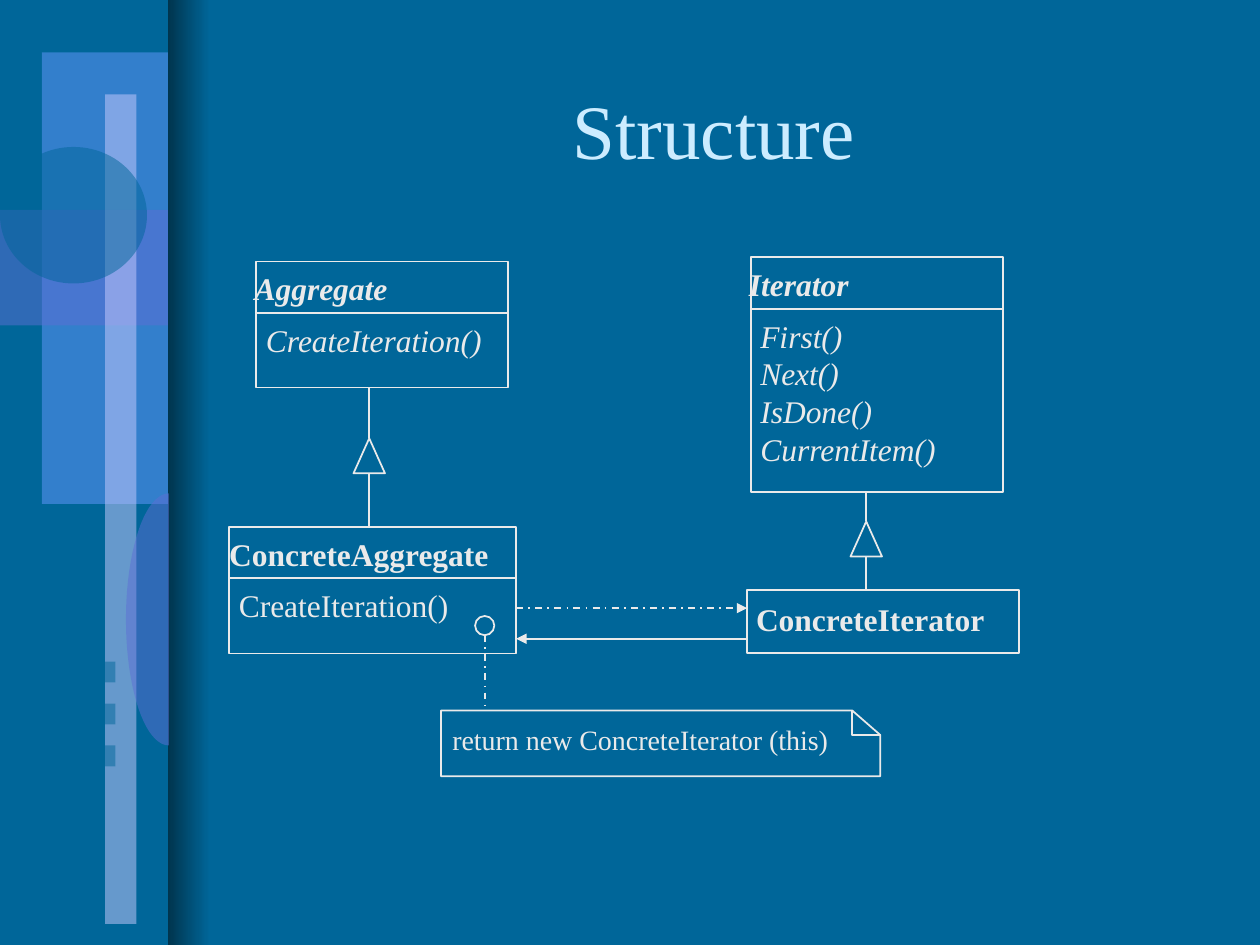
from math import cos, pi, sin

from lxml import etree
from pptx import Presentation
from pptx.dml.color import RGBColor
from pptx.enum.dml import MSO_LINE
from pptx.enum.shapes import MSO_CONNECTOR, MSO_SHAPE
from pptx.enum.text import MSO_ANCHOR, PP_ALIGN
from pptx.oxml.ns import qn
from pptx.util import Pt

RECT, OVAL, TRIANGLE = MSO_SHAPE.RECTANGLE, MSO_SHAPE.OVAL, MSO_SHAPE.ISOSCELES_TRIANGLE
FONT = "Times New Roman"
COLORS = {key: RGBColor.from_string(value) for key, value in {
    "ground": "006699", "shade": "00354E", "title": "CCECFF", "ink": "EAEAEA",
    "blue": "6699FF", "violet": "5E6FD4", "lilac": "CCCCFF"}.items()}

prs = Presentation()
prs.slide_width, prs.slide_height = Pt(720), Pt(540)
slide = prs.slides.add_slide(prs.slide_layouts[5])
slide.background.fill.solid()
slide.background.fill.fore_color.rgb = COLORS["ground"]
shapes = slide.shapes


def finish(shape, tint=None):
    """Give a shape a half-transparent tint, or else only an outline."""
    shape.shadow.inherit = False
    if tint:
        shape.fill.solid()
        shape.fill.fore_color.rgb = COLORS[tint]
        color = shape.fill._xPr.find(qn("a:solidFill"))[0]
        etree.SubElement(color, qn("a:alpha"), val="50000")
        shape.line.fill.background()
    else:
        shape.fill.background()
        shape.line.color.rgb = COLORS["ink"]
        shape.line.width = Pt(1)
    return shape


def draw_line(x1, y1, x2, y2, dashed=False, arrow=False):
    line = shapes.add_connector(MSO_CONNECTOR.STRAIGHT, Pt(x1), Pt(y1), Pt(x2), Pt(y2))
    line.line.color.rgb = COLORS["ink"]
    line.line.width = Pt(1)
    if dashed:
        line.line.dash_style = MSO_LINE.DASH_DOT
    if arrow:
        etree.SubElement(line.line._get_or_add_ln(), qn("a:tailEnd"), type="triangle")
    etree.SubElement(line._element.spPr, qn("a:effectLst"))
    return line


# Decoration on the left
band = shapes.add_shape(RECT, Pt(96), 0, Pt(24), Pt(540))
band.shadow.inherit = False
band.line.fill.background()
band.fill.gradient()
band.fill.gradient_angle = 0
for stop, tone in zip(band.fill.gradient_stops, ("shade", "ground")):
    stop.color.rgb = COLORS[tone]

decoration = [
    (RECT, 24, 30, 72, 258, "blue"),
    (RECT, 0, 120, 96, 66, "violet"),
    (RECT, 60, 54, 18, 474, "lilac"),
    (OVAL, 0, 84, 84, 78, "ground"),
] + [(RECT, 0, 378 + 24 * i, 66, 12, "ground") for i in range(3)]
for kind, x, y, width, height, tint in decoration:
    finish(shapes.add_shape(kind, Pt(x), Pt(y), Pt(width), Pt(height)), tint)

arc = [(Pt(96.5 - 24.5 * sin(pi * i / 40)), Pt(354 - 72 * cos(pi * i / 40)))
       for i in range(41)]
half_oval = shapes.build_freeform(*arc[0])
half_oval.add_line_segments(arc[1:])
finish(half_oval.convert_to_shape(), "violet")

# Title
title = shapes.title
title.left, title.top, title.width, title.height = Pt(102), Pt(47), Pt(612), Pt(90)
frame = title.text_frame
frame.margin_left = frame.margin_right = frame.margin_top = frame.margin_bottom = 0
frame.vertical_anchor = MSO_ANCHOR.TOP
frame.text = "Structure"
frame.paragraphs[0].alignment = PP_ALIGN.CENTER
font = frame.paragraphs[0].runs[0].font
font.name, font.size, font.color.rgb = FONT, Pt(44), COLORS["title"]

# Classes: x, y, width, height, name, name offset, methods, abstract
HEADER = 29.5
classes = [
    (146.5, 149.5, 144, 72, "Aggregate", (-1, 4.5), ["CreateIteration()"], True),
    (131, 301, 164, 72.5, "ConcreteAggregate", (0, 4.5), ["CreateIteration()"], False),
    (429, 147, 144, 134, "Iterator", (-1, 4.5),
     ["First()", "Next()", "IsDone()", "CurrentItem()"], True),
    (427, 337, 155.5, 36, "ConcreteIterator", (5, 6), [], False),
]
# Labels: x, y, width, lines, size, bold, italic
labels = [(258.5, 413, 235, ["return new ConcreteIterator (this)"], 16, False, False)]
for x, y, width, height, name, (dx, dy), methods, abstract in classes:
    finish(shapes.add_shape(RECT, Pt(x), Pt(y), Pt(width), Pt(height)))
    labels.append((x + dx, y + dy, width - 5, [name], 18, True, abstract))
    if methods:
        draw_line(x, y + HEADER, x + width, y + HEADER)
        labels.append((x + 5.5, y + HEADER + 4.5, width - 6, methods, 18, False, abstract))

# Note with a folded corner
for corners, closed in (
    ([(252, 406), (487, 406), (503, 420), (503, 443.5), (252, 443.5)], True),
    ([(487, 406), (487, 420), (503, 420)], False),
):
    points = [(Pt(x), Pt(y)) for x, y in corners]
    outline = shapes.build_freeform(*points[0])
    outline.add_line_segments(points[1:], close=closed)
    finish(outline.convert_to_shape())

for x, y, width, lines, size, bold, italic in labels:
    box = shapes.add_textbox(Pt(x), Pt(y), Pt(width), Pt(size * 1.2 * len(lines)))
    frame = box.text_frame
    frame.word_wrap = True
    frame.margin_left = frame.margin_right = frame.margin_top = frame.margin_bottom = 0
    frame.text = "\n".join(lines)
    for paragraph in frame.paragraphs:
        paragraph.line_spacing = Pt(size * 1.2)
        font = paragraph.runs[0].font
        font.name, font.size, font.color.rgb = FONT, Pt(size), COLORS["ink"]
        font.bold, font.italic = bold, italic

# Inheritance: centre, parent bottom, triangle tip, child top
for x, parent, tip, child in ((211, 221.5, 250.5, 301), (495, 281, 298, 337)):
    triangle = finish(shapes.add_shape(TRIANGLE, Pt(x - 9), Pt(tip), Pt(18), Pt(20)))
    draw_line(x, parent, x, tip).end_connect(triangle, 0)
    draw_line(x, tip + 20, x, child)

# Relations between the concrete classes, and the link to the note
draw_line(295, 347.5, 427, 347.5, dashed=True, arrow=True)
draw_line(427, 365, 295, 365, arrow=True)
finish(shapes.add_shape(OVAL, Pt(271.5), Pt(352), Pt(11), Pt(11)))
draw_line(277, 363, 277, 406, dashed=True)

prs.save("out.pptx")
